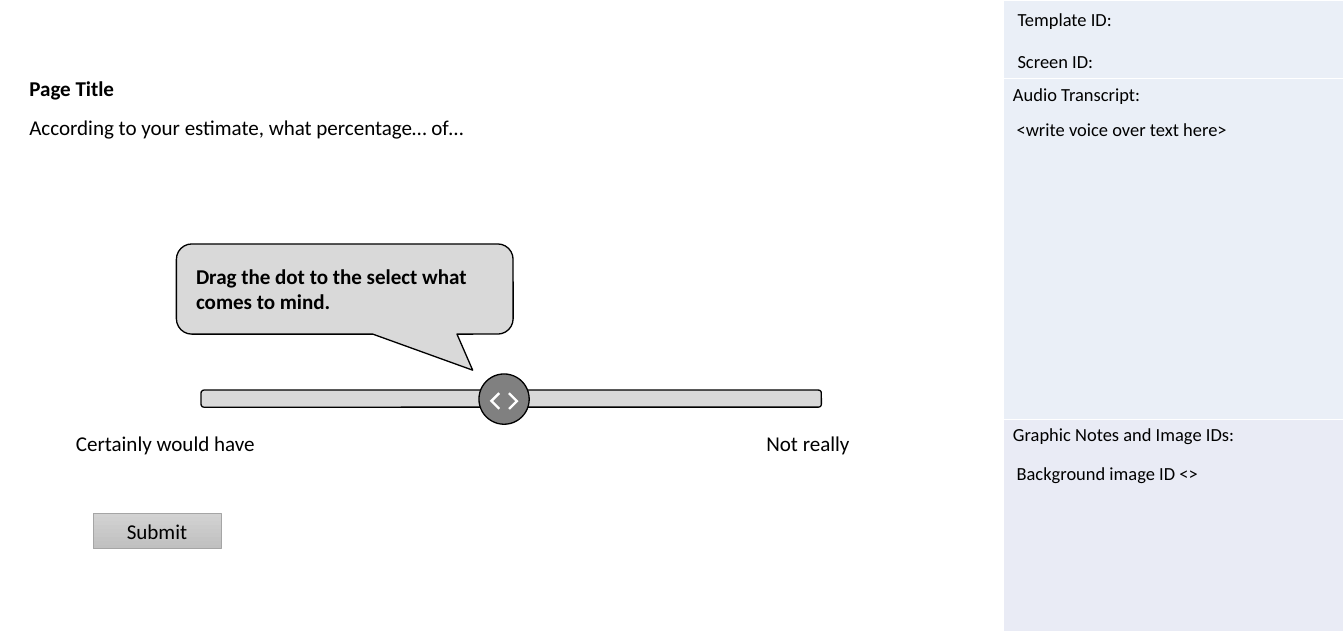
"""Build a storyboard slide with a slider question and a production notes column."""
from dataclasses import dataclass
from typing import Any, Optional

import pptx
import pptx.dml.color
import pptx.enum.shapes
import pptx.enum.text
import pptx.util

Inches = pptx.util.Inches
Shape = pptx.enum.shapes.MSO_SHAPE
Align = pptx.enum.text.PP_ALIGN
Anchor = pptx.enum.text.MSO_ANCHOR

COLORS = {
    "text": "000000",
    "outline": "000000",
    "pale": "D9D9D9",
    "handle": "808080",
    "chevron": "FFFFFF",
    "button_top": "D2D2D2",
    "button_bottom": "C0C0C0",
    "button_edge": "A5A5A5",
    "notes": "EAEFF7",
    "graphics": "E9EBF5",
}
FRAME_FORMAT = {
    "word_wrap": True,
    "auto_size": pptx.enum.text.MSO_AUTO_SIZE.NONE,
    "vertical_anchor": Anchor.TOP,
}
MARGINS = ("margin_left", "margin_top", "margin_right", "margin_bottom")
NO_INSET = (0, 0, 0, 0)
NOTE_INSET = (0.1, 0.05, 0.1, 0.05)
CALLOUT_INSET = (0.16, 0.16, 0.31, 0.16)
BUTTON_INSET = (0, 0.05, 0, 0.05)


@dataclass(frozen=True)
class Label:
    """A text box with its place, size and insets."""
    text: str
    box: tuple[float, float, float, float]
    size: int = 16
    inset: tuple[float, float, float, float] = NO_INSET


@dataclass(frozen=True)
class Figure:
    """A preset shape with its fill, outline and adjustments."""
    kind: Any
    box: tuple[float, float, float, float]
    fill: Optional[str] = None
    line: Optional[str] = "outline"
    weight: float = 1
    rotation: float = 0
    adjustments: tuple[float, ...] = ()


@dataclass(frozen=True)
class NoteRow:
    """A row of the notes column."""
    text: str
    height: float
    fill: str


TITLE_BOX = (0.31, 0.79, 1.54, 0.38)
LABELS = (
    Label("Template ID:", (10.63, 0.04, 3.5, 0.34), 14, NOTE_INSET),
    Label("Screen ID:", (10.63, 0.48, 3.5, 0.34), 14, NOTE_INSET),
    Label("<write voice over text here>", (10.62, 1.19, 3.5, 0.34), 14, NOTE_INSET),
    Label("Background image ID <>", (10.62, 4.82, 3.5, 0.34), 14, NOTE_INSET),
    Label("According to your estimate, what percentage… of…", (0.31, 1.21, 9.14, 0.55)),
    Label("Certainly would have", (0.8, 4.53, 2.11, 0.55)),
    Label("Not really", (8.08, 4.53, 2.11, 0.55)),
)
NOTE_ROWS = (
    NoteRow("", 0.83, "notes"),
    NoteRow("Audio Transcript:", 3.59, "notes"),
    NoteRow("Graphic Notes and Image IDs:", 2.23, "graphics"),
)
CALLOUT = Figure(Shape.ROUNDED_RECTANGULAR_CALLOUT, (1.86, 2.57, 3.55, 0.95), "pale",
                 adjustments=(0.38, 0.9, 0.17))
TRACK = Figure(Shape.FLOWCHART_ALTERNATE_PROCESS, (2.12, 4.11, 6.54, 0.18), "pale")
HANDLE = (
    Figure(Shape.OVAL, (5.05, 3.94, 0.53, 0.53), "handle"),
    Figure(Shape.CORNER, (5.31, 4.16, 0.13, 0.13), "chevron", None,
           rotation=225, adjustments=(0.2, 0.19)),
    Figure(Shape.CORNER, (5.19, 4.16, 0.13, 0.13), "chevron", None,
           rotation=45, adjustments=(0.19, 0.2)),
)
BUTTON = Figure(Shape.RECTANGLE, (0.98, 5.41, 1.35, 0.37), None, "button_edge", 0.5)


def rgb(name: str) -> pptx.dml.color.RGBColor:
    """Return the named colour."""
    return pptx.dml.color.RGBColor.from_string(COLORS[name])


def apply(target: Any, values: dict[str, Any]) -> None:
    """Set each format value on the target."""
    for attribute, value in values.items():
        setattr(target, attribute, value)


def write(frame: Any, text: str, size: int = 16, bold: bool = False,
          align: Any = Align.LEFT) -> None:
    """Write one formatted paragraph into a text frame."""
    paragraph = frame.paragraphs[0]
    paragraph.alignment = align
    run = paragraph.add_run()
    run.text = text
    apply(run.font, {"name": "Calibri", "size": pptx.util.Pt(size), "bold": bold})
    run.font.color.rgb = rgb("text")


def format_frame(frame: Any, inset: tuple[float, ...], **changes: Any) -> None:
    """Set the insets, wrapping and anchor of a text frame."""
    margins = {side: Inches(value) for side, value in zip(MARGINS, inset)}
    apply(frame, {**FRAME_FORMAT, **margins, **changes})


def draw_label(slide: Any, label: Label) -> None:
    """Add a text box."""
    frame = slide.shapes.add_textbox(*map(Inches, label.box)).text_frame
    format_frame(frame, label.inset)
    write(frame, label.text, label.size)


def draw_figure(shapes: Any, figure: Figure) -> Any:
    """Add a preset shape."""
    shape = shapes.add_shape(figure.kind, *map(Inches, figure.box))
    shape.shadow.inherit = False
    shape.rotation = figure.rotation
    for index, value in enumerate(figure.adjustments):
        shape.adjustments[index] = value
    if figure.fill:
        shape.fill.solid()
        shape.fill.fore_color.rgb = rgb(figure.fill)
    if figure.line:
        shape.line.color.rgb = rgb(figure.line)
        shape.line.width = pptx.util.Pt(figure.weight)
    else:
        shape.line.fill.background()
    return shape


def draw_notes(slide: Any) -> None:
    """Add the notes column as a table."""
    height = sum(row.height for row in NOTE_ROWS)
    notes = slide.shapes.add_table(
        len(NOTE_ROWS), 1, Inches(10.58), 0, Inches(3.59), Inches(height)).table
    for index, row in enumerate(NOTE_ROWS):
        notes.rows[index].height = Inches(row.height)
        cell = notes.cell(index, 0)
        cell.fill.solid()
        cell.fill.fore_color.rgb = rgb(row.fill)
        if row.text:
            write(cell.text_frame, row.text, 14)


def draw_title(slide: Any) -> None:
    """Place and format the title."""
    title = slide.shapes.title
    apply(title, dict(zip(("left", "top", "width", "height"), map(Inches, TITLE_BOX))))
    format_frame(title.text_frame, NO_INSET)
    write(title.text_frame, "Page Title", bold=True)


def draw_button(slide: Any) -> None:
    """Add the submit button with its gradient."""
    button = draw_figure(slide.shapes, BUTTON)
    button.fill.gradient()
    button.fill.gradient_angle = 270
    for stop, name in zip(button.fill.gradient_stops, ("button_top", "button_bottom")):
        stop.color.rgb = rgb(name)
    format_frame(button.text_frame, BUTTON_INSET, vertical_anchor=Anchor.MIDDLE)
    write(button.text_frame, "Submit", align=Align.CENTER)


def main() -> None:
    """Build and save the slide."""
    deck = pptx.Presentation()
    apply(deck, {"slide_width": Inches(14.17), "slide_height": Inches(6.69)})
    slide = deck.slides.add_slide(deck.slide_layouts[5])
    draw_title(slide)
    draw_notes(slide)
    for label in LABELS:
        draw_label(slide, label)
    callout = draw_figure(slide.shapes, CALLOUT)
    format_frame(callout.text_frame, CALLOUT_INSET)
    write(callout.text_frame, "Drag the dot to the select what comes to mind.", bold=True)
    draw_figure(slide.shapes, TRACK)
    handle = slide.shapes.add_group_shape()
    for figure in HANDLE:
        draw_figure(handle.shapes, figure)
    draw_button(slide)
    deck.save("out.pptx")


if __name__ == "__main__":
    main()
